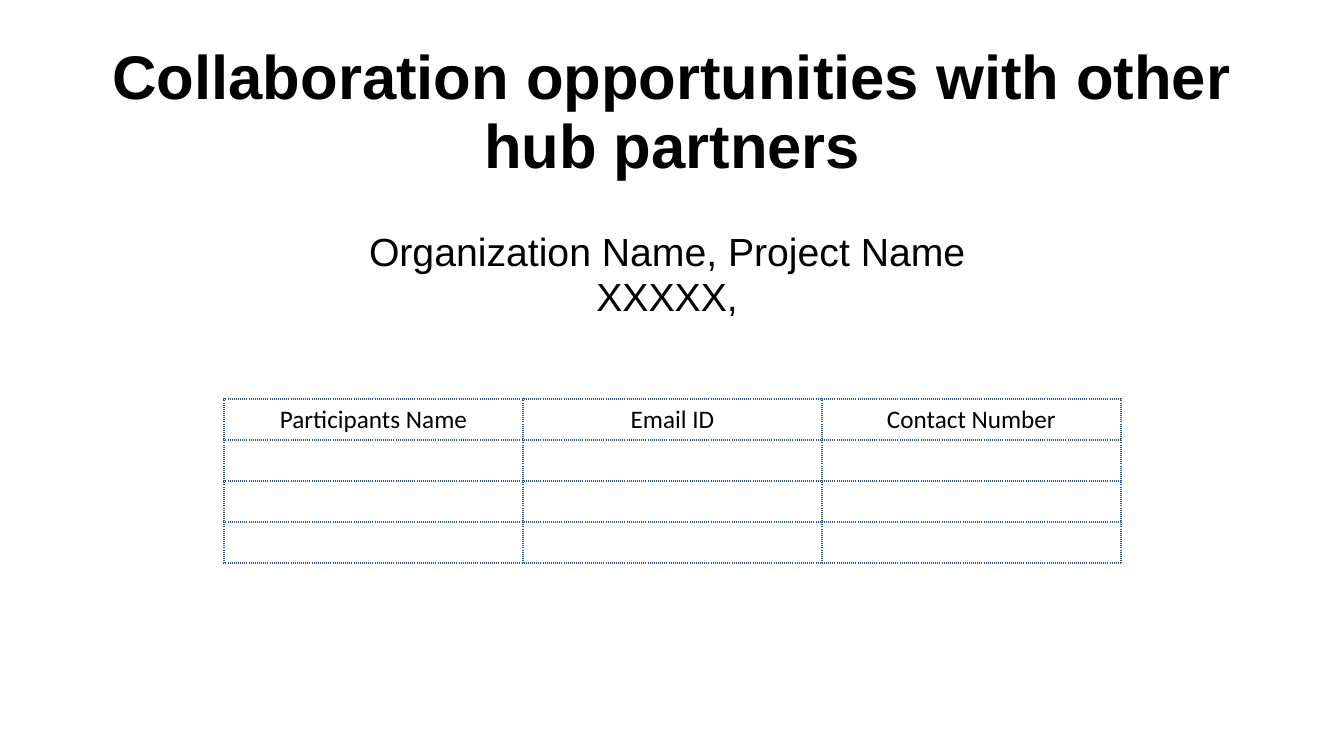
from pptx import Presentation, util as u
from pptx.dml.color import RGBColor
from pptx.enum import text
from pptx.oxml import parse_xml
from pptx.oxml.ns import nsdecls

# Content
HEADING = [
    ("Collaboration opportunities with other hub partners",
     {"size": u.Pt(44), "bold": True}, 0),
    ("Organization Name, Project Name \vXXXXX, ",
     {"size": u.Pt(28), "bold": False}, 35),
]
COLUMNS = ["Participants Name", "Email ID", "Contact Number"]
EMPTY_ROWS = 3

# Layout in px
SLIDE_SIZE = (1344, 756)
TITLE_BOX = (94, 62, 1157, 263)
TABLE_LEFT, TABLE_TOP = 224, 399
COLUMN_WIDTH, ROW_HEIGHT = 299, 41
BLACK, BORDER = "000000", "2F5597"


def px(length):
    return u.Emu(round(length * 914400 / 100.8))


def colour(value):
    return RGBColor.from_string(value)


def set_all(target, values):
    for name, value in values.items():
        setattr(target, name, value)


def write(paragraph, words, font):
    paragraph.text = words
    paragraph.alignment = text.PP_ALIGN.CENTER
    set_all(paragraph.font, font)
    paragraph.font.color.rgb = colour(BLACK)


def add_borders(cell):
    properties = cell._tc.get_or_add_tcPr()
    for index, side in enumerate(("lnL", "lnR", "lnT", "lnB")):
        properties.insert(index, parse_xml(
            f'<a:{side} {nsdecls("a")} w="12700"><a:solidFill>'
            f'<a:srgbClr val="{BORDER}"/></a:solidFill>'
            f'<a:prstDash val="sysDot"/></a:{side}>'))


presentation = Presentation()
presentation.slide_width, presentation.slide_height = map(px, SLIDE_SIZE)
slide = presentation.slides.add_slide(presentation.slide_layouts[0])
subtitle = slide.placeholders[1].element
subtitle.getparent().remove(subtitle)

# Title with organization lines
title = slide.shapes.title
set_all(title, dict(zip(("left", "top", "width", "height"), map(px, TITLE_BOX))))
frame = title.text_frame
set_all(frame, {"word_wrap": True, "auto_size": text.MSO_AUTO_SIZE.NONE,
                "vertical_anchor": text.MSO_ANCHOR.BOTTOM})
for index, (words, font, gap) in enumerate(HEADING):
    paragraph = frame.add_paragraph() if index else frame.paragraphs[0]
    write(paragraph, words, {"name": "Arial", **font})
    set_all(paragraph, {"line_spacing": 0.94, "space_before": u.Pt(gap)})

# Participants table
row_count = 1 + EMPTY_ROWS
table = slide.shapes.add_table(
    row_count, len(COLUMNS), px(TABLE_LEFT), px(TABLE_TOP),
    px(COLUMN_WIDTH * len(COLUMNS)), px(ROW_HEIGHT * row_count)).table
set_all(table, {"first_row": False, "horz_banding": False})
for row_index, row in enumerate(table.rows):
    for column_index, cell in enumerate(row.cells):
        words = "" if row_index else COLUMNS[column_index]
        write(cell.text_frame.paragraphs[0], words,
              {"name": "Calibri", "size": u.Pt(18)})
        cell.fill.background()
        add_borders(cell)

presentation.save("out.pptx")
